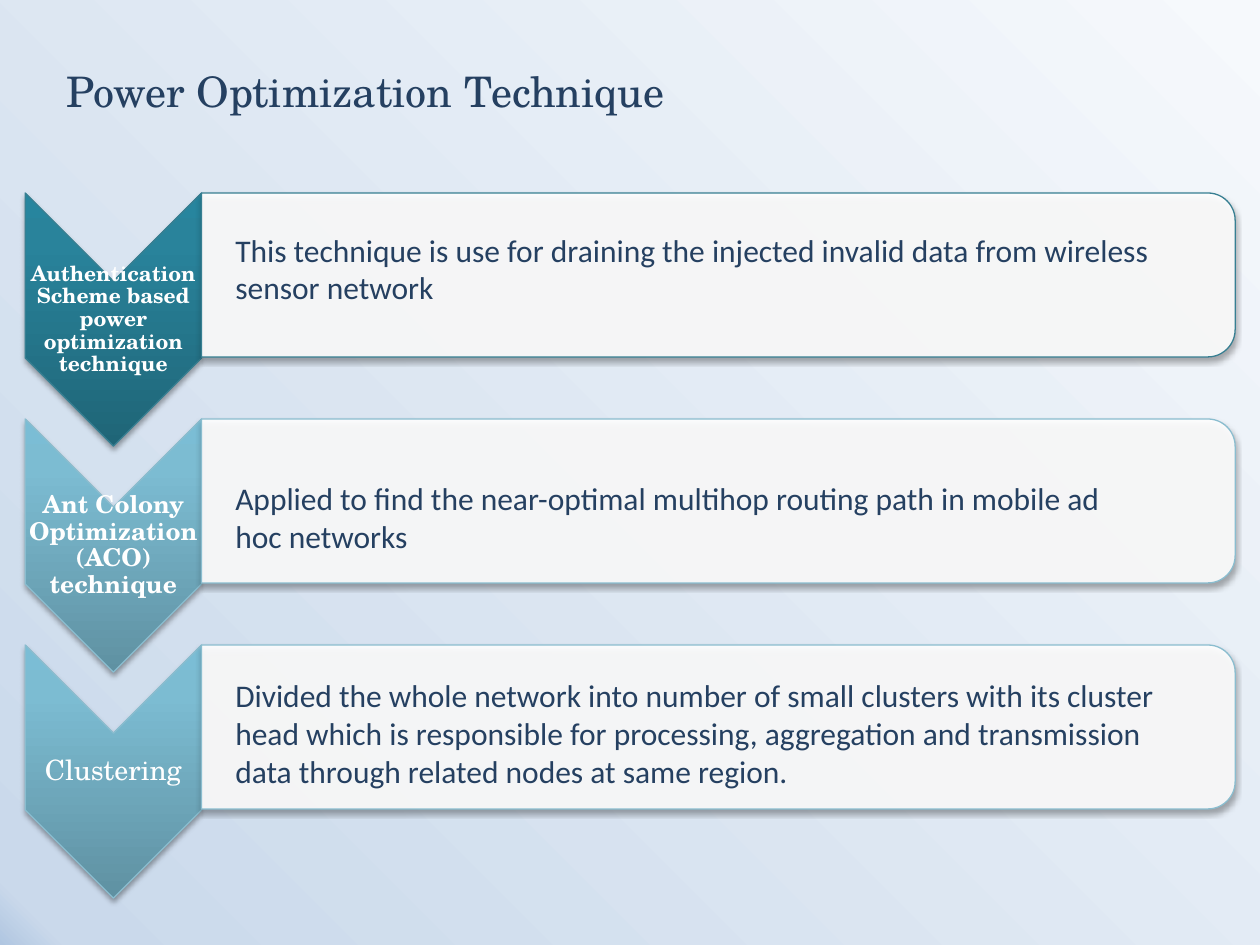
from dataclasses import dataclass

from lxml import etree
from pptx import Presentation
from pptx.dml import color
from pptx.enum import shapes, text
from pptx.oxml import ns
from pptx.util import Pt


@dataclass(frozen=True)
class Theme:
    ink: str = "254061"
    white: str = "FFFFFF"
    shadow: str = "000000"
    strong_line: str = "377F92"
    soft_line: str = "8ABDCF"
    strong_fill: tuple = ((0, "1F6577"), (80, "29839B"), (100, "27859E"))
    soft_fill: tuple = ((0, "5F91A2"), (80, "7CBCD2"), (100, "7BBDD5"))
    background: tuple = ((0, "F6F9FC"), (97, "CAD9EB"), (100, "B0C6E1"))
    serif: str = "TeX Gyre Schola"
    sans: str = "Calibri"
    title_size: int = 24
    body_size: int = 18
    label_sizes: tuple = (12, 14, 16)


def write(box, wording, *, font, size, tint, bold=False, align=text.PP_ALIGN.LEFT,
          anchor=text.MSO_ANCHOR.TOP, inset=None, spacing=None,
          fit=text.MSO_AUTO_SIZE.SHAPE_TO_FIT_TEXT):
    frame = box.text_frame
    frame.word_wrap = True
    frame.auto_size = fit
    frame.vertical_anchor = anchor
    if inset is not None:
        frame.margin_left = frame.margin_right = Pt(inset)
        frame.margin_top = frame.margin_bottom = Pt(inset)
    para = frame.paragraphs[0]
    para.alignment = align
    para.line_spacing = spacing
    span = para.add_run()
    span.text = wording
    span.font.name = font
    span.font.size = Pt(size)
    span.font.bold = bold
    span.font.color.rgb = color.RGBColor.from_string(tint)


def paint_gradient(owner, fill, stops, angle):
    fill.gradient()
    fill.gradient_angle = angle
    gradient = next(owner.iter(ns.qn("a:gradFill")))
    gradient.set("rotWithShape", "0")
    stop_list = gradient.find(ns.qn("a:gsLst"))
    for stop in list(stop_list):
        stop_list.remove(stop)
    for position, tint in stops:
        stop = etree.SubElement(stop_list, ns.qn("a:gs"), pos=str(position * 1000))
        etree.SubElement(stop, ns.qn("a:srgbClr"), val=tint)


theme = Theme()
deck = Presentation()
deck.slide_width, deck.slide_height = Pt(720), Pt(540)
page = deck.slides.add_slide(deck.slide_layouts[5])
paint_gradient(page.element, page.background.fill, theme.background, 225)

title = page.shapes.title
title.left, title.top, title.width, title.height = Pt(31), Pt(33.8), Pt(607), Pt(36)
write(title, "Power Optimization Technique", font=theme.serif, size=theme.title_size,
      tint=theme.ink)

techniques = [
    ("Authentication Scheme based power optimization technique", True,
     theme.strong_fill, theme.strong_line,
     "This technique is use for draining the injected invalid data from wireless sensor network",
     (128.2, 544.3, 51)),
    ("Ant Colony Optimization (ACO) technique", True,
     theme.soft_fill, theme.soft_line,
     "Applied to find the near-optimal multihop routing path in mobile ad hoc networks",
     (270, 532.8, 51)),
    ("Clustering", False,
     theme.soft_fill, theme.soft_line,
     "Divided the whole network into number of small clusters with its cluster head "
     "which is responsible for processing, aggregation and transmission data through "
     "related nodes at same region.",
     (383, 561.6, 72.7)),
]

first_top, pitch = 110.3, 129.15
label_left, label_width = 14.4, 100.8
chevron_height = 144.6
panel_left, panel_width, panel_height = 115.2, 590.6, 93.7

for row, (label, bold, stops, outline, detail, place) in enumerate(techniques):
    top = first_top + row * pitch
    parts = [
        (shapes.MSO_SHAPE.CHEVRON, label_left, label_width, chevron_height),
        (shapes.MSO_SHAPE.ROUND_2_SAME_RECTANGLE, panel_left, panel_width, panel_height),
    ]
    for kind, left, width, height in parts:
        shape = page.shapes.add_shape(
            kind, Pt(left + (width - height) / 2), Pt(top + (height - width) / 2),
            Pt(height), Pt(width))
        shape.rotation = 90
        shape.line.color.rgb = color.RGBColor.from_string(outline)
        shape.line.width = Pt(0.75)
        if kind == shapes.MSO_SHAPE.CHEVRON:
            paint_gradient(shape.element, shape.fill, stops, 90)
        else:
            shape.fill.solid()
            shape.fill.fore_color.rgb = color.RGBColor.from_string(theme.white)
            tint = next(shape.element.iter(ns.qn("a:srgbClr")))
            etree.SubElement(tint, ns.qn("a:alpha"), val="90000")
        shape.shadow.inherit = False
        effects = next(shape.element.iter(ns.qn("a:effectLst")))
        shadow = etree.SubElement(
            effects, ns.qn("a:outerShdw"), blurRad=str(Pt(3.1)), dist=str(Pt(1.8)),
            dir="5400000", rotWithShape="0")
        tint = etree.SubElement(shadow, ns.qn("a:srgbClr"), val=theme.shadow)
        etree.SubElement(tint, ns.qn("a:alpha"), val="35000")

    box = page.shapes.add_textbox(Pt(label_left), Pt(top + 50.8), Pt(label_width), Pt(43.2))
    write(box, label, font=theme.serif, size=theme.label_sizes[row], tint=theme.white,
          bold=bold, align=text.PP_ALIGN.CENTER, anchor=text.MSO_ANCHOR.MIDDLE,
          inset=0.7, spacing=0.9, fit=text.MSO_AUTO_SIZE.NONE)

    detail_top, detail_width, detail_height = place
    box = page.shapes.add_textbox(Pt(127.4), Pt(detail_top), Pt(detail_width), Pt(detail_height))
    write(box, detail, font=theme.sans, size=theme.body_size, tint=theme.ink)

deck.save("out.pptx")
